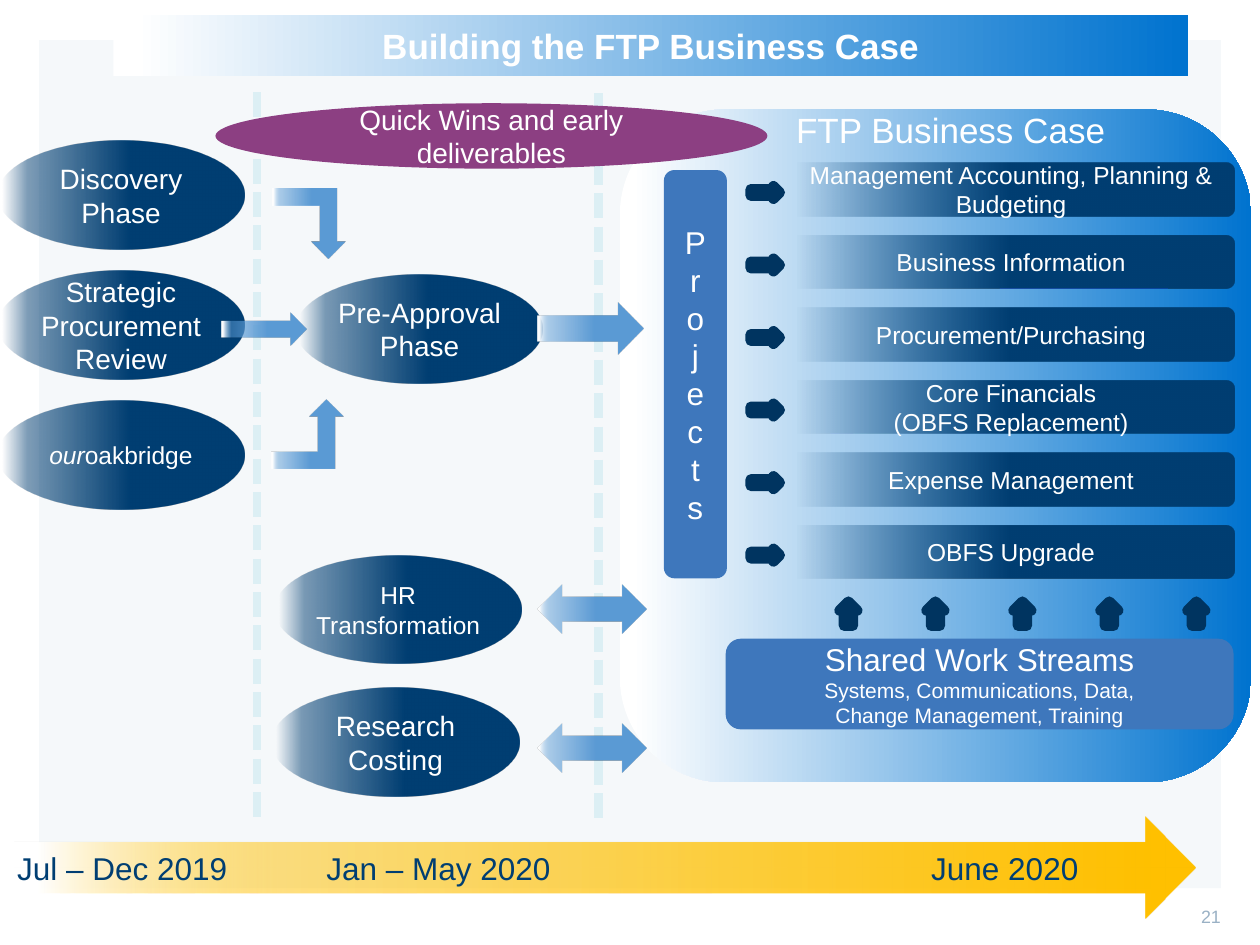
"""Builds the FTP business case roadmap slide."""
from lxml import etree
from pptx import Presentation
from pptx import util as u
from pptx.dml.color import RGBColor
from pptx.enum import dml, shapes, text
from pptx.oxml.ns import qn

KIND = shapes.MSO_SHAPE
NAVY, BLUE, STEEL, EDGE, WHITE = "003E72", "0073CF", "3E77BC", "003460", "FFFFFF"

PANEL_FADE = [(2, WHITE, 100), (100, BLUE, 100)]
OVAL_FADE = [(2, NAVY, 0), (12, NAVY, 50), (54, NAVY, 100)]
BAR_FADE = [(2, NAVY, 0), (50, NAVY, 100), (100, NAVY, 100)]
ARROW_FADE = [(2, WHITE, 100), (12, "5B9BD5", 50), (54, "5B9BD5", 100)]
TIME_FADE = [(2, WHITE, 100), (23, "FFC000", 50), (97, "FFC000", 100)]

PHASES = [
    (-1.4, 80.6, ["Discovery Phase"], 16),
    (-1.4, 154.8, ["Strategic Procurement Review"], 16),
    (169.2, 157, ["Pre-Approval Phase"], 16),
    (157, 317.5, ["HR Transformation"], 14),
    (155.5, 393.1, ["Research Costing"], 16),
    (-1.4, 229, [[("our", {"italic": True}), ("oakbridge", {})]], 14),
]
PROJECTS = [
    ["Management Accounting, Planning & Budgeting"],
    ["Business Information"],
    ["Procurement/Purchasing"],
    ["Core Financials", "(OBFS Replacement)"],
    ["Expense Management"],
    ["OBFS Upgrade"],
]
SHARED = [
    [("Shared Work Streams", {"size": u.Pt(18)})],
    "Systems, Communications, Data,",
    "Change Management, Training",
]
FLOWS = [
    (KIND.BENT_UP_ARROW, (155.5, 228.2, 41, 39.6)),
    (KIND.LEFT_RIGHT_ARROW, (307.4, 334.1, 61.9, 28.1)),
    (KIND.LEFT_RIGHT_ARROW, (307.4, 413.3, 61.9, 28.1)),
    (KIND.RIGHT_ARROW, (307.4, 172.8, 60.5, 29.5)),
    (KIND.RIGHT_ARROW, (126.7, 178.6, 48.2, 18.7)),
]
DATES = [
    ("Jul – Dec 2019", -7.2, 154.1),
    ("Jan – May 2020", 173.5, 154.1),
    ("June 2020", 517.7, 113),
]
SEPARATORS = [(342, 53.3), (146.9, 52.6)]
PROJECT_STEP, STREAM_STEP = 41.45, 49.7


def colour(value):
    return RGBColor.from_string(value)


def points(values):
    return [u.Pt(value) for value in values]


def paint(shape, fill):
    """Fill with a hex colour, or with a list of (position, colour, opacity) stops."""
    if isinstance(fill, str):
        shape.fill.solid()
        shape.fill.fore_color.rgb = colour(fill)
        return
    shape.fill.background()
    blank = shape.element.spPr.find(qn("a:noFill"))
    fade = etree.Element(qn("a:gradFill"), rotWithShape="1")
    stops = etree.SubElement(fade, qn("a:gsLst"))
    for position, value, opacity in fill:
        stop = etree.SubElement(stops, qn("a:gs"), pos=str(position * 1000))
        tint = etree.SubElement(stop, qn("a:srgbClr"), val=value)
        etree.SubElement(tint, qn("a:alpha"), val=str(opacity * 1000))
    etree.SubElement(fade, qn("a:lin"), ang="0", scaled="0")
    shape.element.spPr.replace(blank, fade)


def write(shape, lines, size, ink=WHITE, align="CENTER", inset=2.88, **extra):
    """Write lines, each a string or a list of (text, format) spans."""
    frame = shape.text_frame
    settings = {"word_wrap": True, "auto_size": text.MSO_AUTO_SIZE.NONE,
                "vertical_anchor": text.MSO_ANCHOR.MIDDLE}
    settings.update({f"margin_{side}": u.Pt(inset)
                     for side in ("left", "top", "right", "bottom")})
    for name, value in settings.items():
        setattr(frame, name, value)
    for index, line in enumerate(lines):
        para = frame.add_paragraph() if index else frame.paragraphs[0]
        para.alignment = getattr(text.PP_ALIGN, align)
        for words, style in [(line, {})] if isinstance(line, str) else line:
            span = para.add_run()
            span.text = words
            look = {"name": "Arial", "size": u.Pt(size), **extra, **style}
            for name, value in look.items():
                setattr(span.font, name, value)
            span.font.color.rgb = colour(ink)


def add_shape(page, kind, place, fill, edge=None):
    shape = page.shapes.add_shape(kind, *points(place))
    shape.shadow.inherit = False
    paint(shape, fill)
    if edge:
        shape.line.color.rgb = colour(edge)
        shape.line.width = u.Pt(6)
    else:
        shape.line.fill.background()
    return shape


def add_label(page, words, place, size, **style):
    box = page.shapes.add_textbox(*points(place))
    write(box, [words], size, **style)


def add_title(page):
    title = page.shapes.title
    title.left, title.top, title.width, title.height = points((64.8, 8.6, 614.2, 34.6))
    etree.SubElement(title.element.spPr, qn("a:prstGeom"), prst="roundRect")
    paint(title, PANEL_FADE)
    write(title, ["Building the FTP Business Case"], 20, bold=True)
    page.shapes.element.append(title.element)


def add_separators(page):
    for left, top in SEPARATORS:
        line = page.shapes.add_connector(
            shapes.MSO_CONNECTOR.STRAIGHT, *points((left, top, left, top + 419)))
        line.line.color.rgb = colour("DCEFF4")
        line.line.width = u.Pt(4.75)
        line.line.dash_style = dml.MSO_LINE.SQUARE_DOT
        etree.SubElement(line.element.spPr, qn("a:effectLst"))


def add_business_case(page):
    add_shape(page, KIND.ROUNDED_RECTANGLE, (354.2, 62.6, 360.7, 384.5), PANEL_FADE)
    add_label(page, "FTP Business Case", (399.6, 55.4, 287.3, 37.4), 20)
    for index, lines in enumerate(PROJECTS):
        shift = index * PROJECT_STEP
        bar = add_shape(page, KIND.ROUNDED_RECTANGLE, (450, 93 + shift, 255.6, 30.5), BAR_FADE)
        write(bar, lines, 14)
        add_shape(page, KIND.RIGHT_ARROW, (429, 106.4 + shift, 16.6, 7.2), NAVY, EDGE)
    column = add_shape(page, KIND.ROUNDED_RECTANGLE, (379.4, 97.2, 36, 233.3), STEEL)
    write(column, ["Projects"], 18)
    column.text_frame._txBody.bodyPr.set("vert", "wordArtVert")
    shared = add_shape(page, KIND.ROUNDED_RECTANGLE, (414.7, 365, 290.2, 51.8), STEEL)
    write(shared, SHARED, 12)
    for index in range(5):
        place = (478 + index * STREAM_STEP, 345.6, 13.7, 10.1)
        add_shape(page, KIND.RIGHT_ARROW, place, NAVY, EDGE).rotation = 270


def add_phases(page):
    for left, top, lines, size in PHASES:
        oval = add_shape(page, KIND.OVAL, (left, top, 141.1, 61.9), OVAL_FADE)
        write(oval, lines, size)
    for kind, place in FLOWS:
        add_shape(page, kind, place, ARROW_FADE)
    down = add_shape(page, KIND.BENT_UP_ARROW, (155.5, 108, 41.8, 39.6), ARROW_FADE)
    down.rotation = 180
    down.element.spPr.xfrm.set("flipH", "1")
    wins = add_shape(page, KIND.OVAL, (123.1, 59, 315.4, 37.4), "8C3F82")
    write(wins, ["Quick Wins and early deliverables"], 16)


def add_timeline(page):
    add_shape(page, KIND.RIGHT_ARROW, (8.6, 466.6, 674.6, 58.3), TIME_FADE)
    for words, left, width in DATES:
        add_label(page, words, (left, 481.7, width, 28.8), 18, ink=NAVY)


def main():
    deck = Presentation()
    deck.slide_width, deck.slide_height = points((720, 540))
    page = deck.slides.add_slide(deck.slide_layouts[5])
    add_shape(page, KIND.RECTANGLE, (22.3, 23, 675.4, 484.6), "F5F8FA")
    add_title(page)
    add_separators(page)
    add_business_case(page)
    add_phases(page)
    add_timeline(page)
    add_label(page, "21", (647.3, 515.5, 50.4, 16.6), 10.2,
              ink="9AB1C5", align="RIGHT", inset=0)
    deck.save("out.pptx")


if __name__ == "__main__":
    main()
